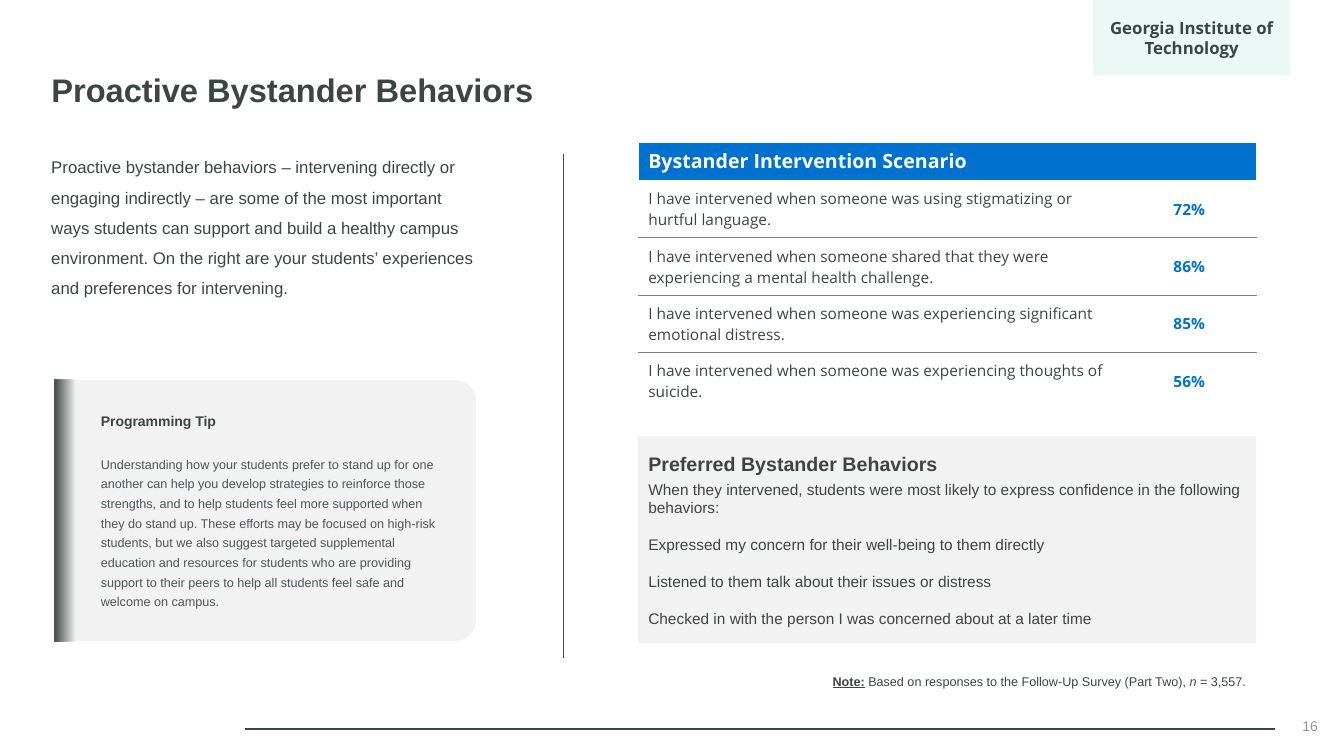
from dataclasses import dataclass

from lxml.etree import SubElement
from pptx import Presentation
from pptx.dml.color import RGBColor as RGB
from pptx.enum.shapes import MSO_CONNECTOR as Link, MSO_SHAPE as Kind
from pptx.enum.text import MSO_ANCHOR as Anchor, MSO_AUTO_SIZE as Auto, PP_ALIGN as Align
from pptx.oxml.ns import qn
from pptx.util import Inches, Pt


@dataclass(frozen=True)
class Theme:
    ink: str = "3D4542"
    soft: str = "4C5758"
    rule: str = "3D4543"
    panel: str = "F2F2F2"
    blue: str = "0171D0"
    mint: str = "3CC0AF"
    grey: str = "808080"
    faint: str = "929493"
    white: str = "FFFFFF"
    sans: str = "Arial"
    open: str = "Open Sans"
    title: float = 23.3
    head: float = 14
    lead: float = 12
    body: float = 11
    label: float = 10
    small: float = 9


@dataclass(frozen=True)
class Box:
    left: float
    top: float
    width: float
    height: float

    def lengths(self):
        return [Inches(v) for v in (self.left, self.top, self.width, self.height)]


@dataclass(frozen=True)
class Rule:
    start: tuple
    end: tuple
    color: str
    width: float


@dataclass(frozen=True)
class Scene:
    text: str
    share: str


T = Theme()
INTRO = ("Proactive bystander behaviors – intervening directly or engaging indirectly – are some "
         "of the most important ways students can support and build a healthy campus environment. "
         "On the right are your students’ experiences and preferences for intervening.")
TIP = ("Understanding how your students prefer to stand up for one another can help you develop "
       "strategies to reinforce those strengths, and to help students feel more supported when "
       "they do stand up. These efforts may be focused on high-risk students, but we also suggest "
       "targeted supplemental education and resources for students who are providing support to "
       "their peers to help all students feel safe and welcome on campus.")
WHEN = ("When they intervened, students were most likely to express confidence in the following "
        "behaviors:")
ACTS = ["Expressed my concern for their well-being to them directly",
        "Listened to them talk about their issues or distress",
        "Checked in with the person I was concerned about at a later time"]
SCENES = [
    Scene("I have intervened when someone was using stigmatizing or hurtful language.", "72%"),
    Scene("I have intervened when someone shared that they were experiencing a mental health "
          "challenge.", "86%"),
    Scene("I have intervened when someone was experiencing significant emotional distress.", "85%"),
    Scene("I have intervened when someone was experiencing thoughts of suicide.", "56%"),
]
RULES = [Rule((12.65, 7.23), (2.43, 7.23), T.rule, 1.5),
         Rule((5.59, 1.53), (5.59, 6.53), T.ink, 1)]


def rgb(code: str) -> RGB:
    return RGB.from_string(code)


def put(frame, text: str, *, size=T.body, color=T.ink, font=T.sans, bold=False, italic=False,
        under=False, align=Align.LEFT, line=1.0, before=0, after=0, join=False):
    """Write a paragraph, or with join a further run of the last one."""
    par = frame.paragraphs[-1]
    if not join:
        if par.runs:
            par = frame.add_paragraph()
        props = par._p.get_or_add_pPr()
        props.set("marL", "0")
        props.set("indent", "0")
        SubElement(props, qn("a:buNone"))
        par.alignment, par.line_spacing = align, line
        par.space_before, par.space_after = Pt(before), Pt(after)
    run = par.add_run()
    run.text = text
    look = run.font
    look.name, look.size, look.color.rgb = font, Pt(size), rgb(color)
    look.bold, look.italic, look.underline = bold, italic, under


def setup(frame, anchor=Anchor.MIDDLE, side=0.1, edge=0.05):
    frame.word_wrap, frame.auto_size = True, Auto.NONE
    frame.vertical_anchor = anchor
    frame.margin_left = frame.margin_right = Inches(side)
    frame.margin_top = frame.margin_bottom = Inches(edge)
    return frame


def place(shape, box: Box):
    shape.left, shape.top, shape.width, shape.height = box.lengths()


def area(slide, box: Box, **layout):
    return setup(slide.shapes.add_textbox(*box.lengths()).text_frame, **layout)


def block(slide, kind, box: Box, color: str):
    shape = slide.shapes.add_shape(kind, *box.lengths())
    shape.shadow.inherit = False
    shape.fill.solid()
    shape.fill.fore_color.rgb = rgb(color)
    shape.line.fill.background()
    return shape


def fade(shape, share: int):
    """Set the opacity, in percent, of the last fill colour."""
    last = list(shape.element.spPr.iter(qn("a:srgbClr")))[-1]
    SubElement(last, qn("a:alpha"), val=str(share * 1000))


def draw(slide, rule: Rule):
    ends = [Inches(v) for v in (*rule.start, *rule.end)]
    line = slide.shapes.add_connector(Link.STRAIGHT, *ends)
    line.line.color.rgb, line.line.width = rgb(rule.color), Pt(rule.width)
    SubElement(line.element.spPr, qn("a:effectLst"))


def edge(cell, side: str, color: str, width: float):
    line = SubElement(cell._tc.get_or_add_tcPr(), qn(f"a:ln{side}"), w=str(Pt(width)))
    SubElement(SubElement(line, qn("a:solidFill")), qn("a:srgbClr"), val=color)


def chart_scenes(slide, box: Box):
    """Add the table of scenarios."""
    last = len(SCENES)
    table = slide.shapes.add_table(last + 1, 2, *box.lengths()).table
    table.horz_banding = False
    for col, width in zip(table.columns, (4.8, 1.33)):
        col.width = Inches(width)
    grey, white = (T.grey, 0.75), (T.white, 1)
    for i, row in enumerate(table.rows):
        row.height = Inches(0.57 if i else 0.38)
        for cell in row.cells:
            cell.vertical_anchor = Anchor.MIDDLE
            cell.margin_left = cell.margin_right = Inches(0.1)
            cell.margin_top = cell.margin_bottom = Inches(0.05 if i else 0)
            edge(cell, "L", *white)
            edge(cell, "R", *white)
            edge(cell, "T", *(grey if i > 1 else white))
            edge(cell, "B", *(grey if 0 < i < last else white))
            if i:
                cell.fill.background()
            else:
                cell.fill.solid()
                cell.fill.fore_color.rgb = rgb(T.blue)
    table.cell(0, 0).merge(table.cell(0, 1))
    put(table.cell(0, 0).text_frame, "Bystander Intervention Scenario", size=T.head,
        color=T.white, font=T.open, bold=True)
    for i, scene in enumerate(SCENES, 1):
        put(table.cell(i, 0).text_frame, scene.text, font=T.open)
        put(table.cell(i, 1).text_frame, scene.share, font=T.open, color=T.blue, bold=True,
            align=Align.CENTER)


def main():
    deck = Presentation()
    deck.slide_width, deck.slide_height = Inches(13.33), Inches(7.5)
    slide = deck.slides.add_slide(deck.slide_layouts[1])
    title, prefs = slide.placeholders
    place(title, Box(0.41, 0.56, 11.34, 0.7))
    put(setup(title.text_frame), "Proactive Bystander Behaviors", size=T.title, bold=True, line=0.9)

    place(prefs, Box(6.33, 4.33, 6.13, 2.05))
    prefs.fill.solid()
    prefs.fill.fore_color.rgb = rgb(T.panel)
    frame = setup(prefs.text_frame)
    put(frame, "Preferred Bystander Behaviors", size=T.head, bold=True, after=3)
    put(frame, WHEN)
    for act in ACTS:
        put(frame, act, before=13)

    for rule in RULES:
        draw(slide, rule)
    put(area(slide, Box(0.41, 1.41, 4.39, 1.58), anchor=Anchor.TOP), INTRO, size=T.lead,
        line=1.5, after=2)

    card = block(slide, Kind.ROUND_2_SAME_RECTANGLE, Box(1.33, 2.97, 2.59, 4.19), T.panel)
    card.rotation = 90
    card.adjustments[0], card.adjustments[1] = 0.079, 0
    band = block(slide, Kind.RECTANGLE, Box(0.54, 3.77, 0.3, 2.6), T.rule)
    band.fill.gradient()
    band.fill.gradient_angle = 0
    for stop, spot in zip(band.fill.gradient_stops, (0, 0.7)):
        stop.color.rgb, stop.position = rgb(T.rule), spot
    fade(band, 0)
    frame = area(slide, Box(0.75, 3.77, 3.83, 2.6), side=0.25, edge=0)
    put(frame, "Programming Tip", size=T.label, bold=True, line=Pt(12), after=16)
    put(frame, TIP, size=T.small, color=T.soft, line=1.3, after=2)

    chart_scenes(slide, Box(6.33, 1.41, 6.13, 2.66))
    frame = area(slide, Box(7.32, 6.64, 6.01, 0.22))
    put(frame, "Note:", size=T.small, bold=True, under=True, align=Align.CENTER, line=Pt(12), after=2)
    put(frame, " Based on responses to the Follow-Up Survey (Part Two), ", size=T.small, join=True)
    put(frame, "n", size=T.small, italic=True, join=True)
    put(frame, " = 3,557. ", size=T.small, join=True)

    tag = block(slide, Kind.RECTANGLE, Box(10.84, 0, 1.96, 0.75), T.mint)
    fade(tag, 10)
    put(setup(tag.text_frame, edge=0), "Georgia Institute of Technology", size=T.lead,
        font=T.open, bold=True, align=Align.CENTER)
    put(area(slide, Box(10.17, 7, 3, 0.4)), "16", size=T.label, color=T.faint, align=Align.RIGHT)
    deck.save("out.pptx")


if __name__ == "__main__":
    main()
